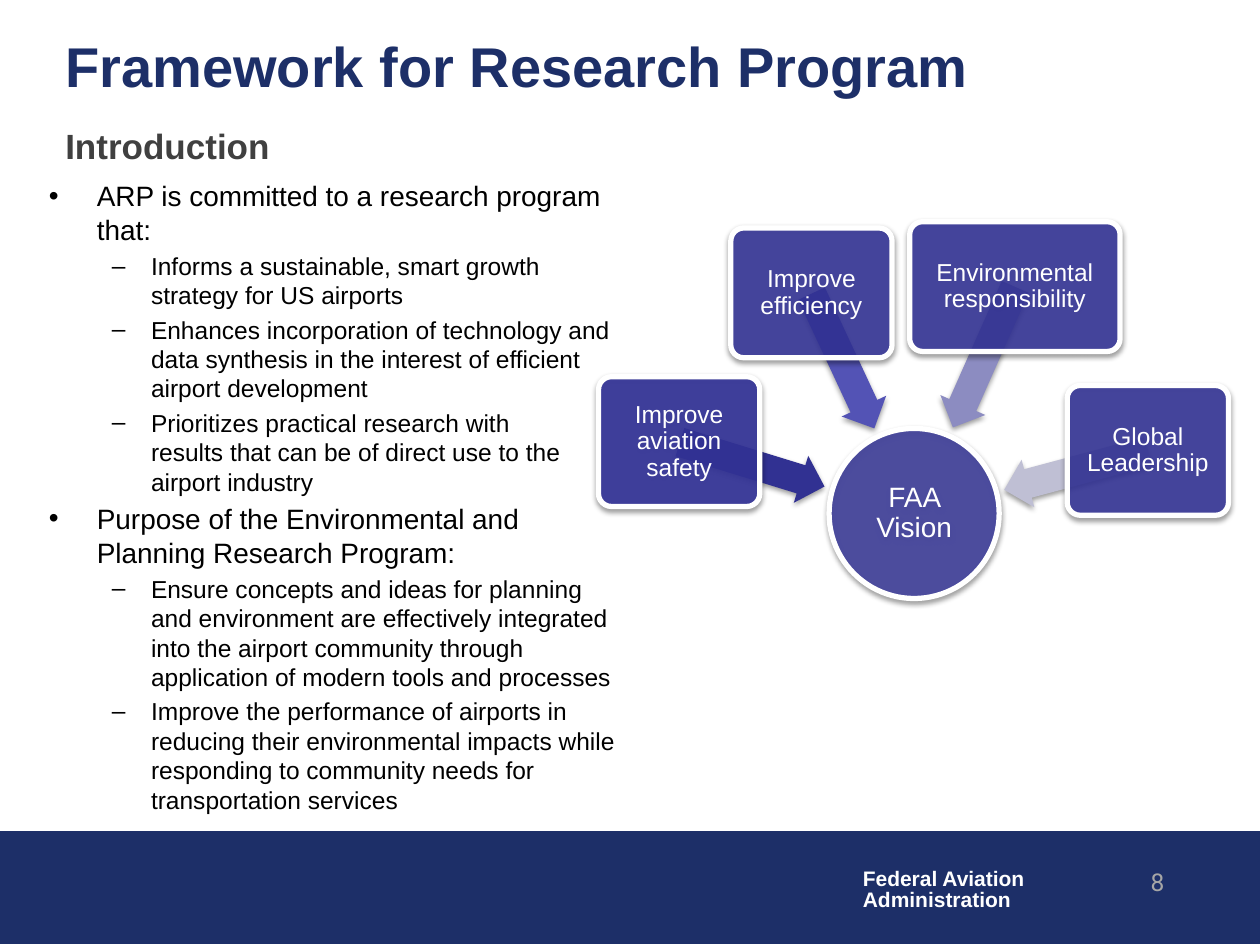
from lxml import etree
from pptx import Presentation
from pptx.dml.color import RGBColor
from pptx.enum import shapes, text
from pptx.oxml.ns import qn
from pptx.util import Inches, Pt

COLORS = {"navy": "1D2F68", "white": "FFFFFF", "black": "000000",
          "gray": "404040", "number": "A6A6A6", "indigo": "333399"}

TITLE = [("Framework for Research Program", 32, "navy", 0),
         ("Introduction", 20, "gray", 15)]

BODY = [
    ("ARP is committed to a research program that:", [
        "Informs a sustainable, smart growth strategy for US airports",
        "Enhances incorporation of technology and data synthesis in the "
        "interest of efficient airport development",
        "Prioritizes practical research with \v"
        "results that can be of direct use to the airport industry"]),
    ("Purpose of the Environmental and Planning Research Program:", [
        "Ensure concepts and ideas for planning and environment are effectively "
        "integrated into the airport community through application of modern "
        "tools and processes",
        "Improve the performance of airports in reducing their environmental "
        "impacts while responding to community needs for transportation services"]),
]
# bullet, left margin, hanging indent, size per level
LEVELS = [("•", 0.38, 0.38, 16), ("–", 0.81, 0.31, 14)]

# label, card box, opacity %, arrow box, arrow rotation, arrow color
GOALS = [
    ("Improve aviation safety", (4.75, 2.99, 1.28, 1.03), 90,
     (5.37, 3.49, 1.2, 0.39), 197.1, "313192"),
    ("Improve efficiency", (5.8, 1.81, 1.28, 1.03), 85,
     (6.1, 2.67, 1.18, 0.39), 245, "5353B5"),
    ("Environmental responsibility", (7.22, 1.76, 1.67, 1.03), 85,
     (7.2, 2.64, 1.22, 0.39), 293.9, "8C8CC1"),
    ("Global Leadership", (8.47, 3.06, 1.28, 1.03), 85,
     (7.95, 3.54, 1.18, 0.39), 345, "BFBFD4"),
]
VISION = ("FAA Vision", (6.58, 3.4, 1.35, 1.35), 80)

prs = Presentation()
prs.slide_width, prs.slide_height = Inches(10), Inches(7.5)
s = prs.slides.add_slide(prs.slide_layouts[6])


def rgb(color):
    return RGBColor.from_string(COLORS.get(color, color))


def write(p, words, size, color, font="Arial", bold=False, **layout):
    for name, value in layout.items():
        setattr(p, name, value)
    p.text = words
    for r in p.runs:
        for name, value in {"name": font, "size": Pt(size), "bold": bold}.items():
            setattr(r.font, name, value)
        r.font.color.rgb = rgb(color)


def add_text(box, anchor=text.MSO_ANCHOR.TOP, wrap=True):
    tf = s.shapes.add_textbox(*map(Inches, box)).text_frame
    tf.word_wrap, tf.vertical_anchor = wrap, anchor
    return tf


def next_paragraph(tf, i):
    return tf.add_paragraph() if i else tf.paragraphs[0]


def add_shape(kind, box, fill, line=None, width=0.75, opacity=100, shadow=True):
    sp = s.shapes.add_shape(kind, *map(Inches, box))
    sp.fill.solid()
    sp.fill.fore_color.rgb = rgb(fill)
    if line:
        sp.line.color.rgb = rgb(line)
        sp.line.width = Pt(width)
    else:
        sp.line.fill.background()
    props = sp._element.spPr
    if opacity < 100:
        color = props.find(qn("a:solidFill")).find(qn("a:srgbClr"))
        etree.SubElement(color, qn("a:alpha"), val=str(opacity * 1000))
    sp.shadow.inherit = False
    if shadow:
        outer = etree.SubElement(props.find(qn("a:effectLst")), qn("a:outerShdw"),
                                 blurRad=str(Pt(3.1)), dist=str(Pt(1.6)),
                                 dir="5400000", rotWithShape="0")
        color = etree.SubElement(outer, qn("a:srgbClr"), val=COLORS["black"])
        etree.SubElement(color, qn("a:alpha"), val="38000")
    return sp


def add_node(kind, label, box, opacity, size, inset):
    sp = add_shape(kind, box, "indigo", "white", 3, opacity)
    tf = sp.text_frame
    tf.word_wrap, tf.vertical_anchor = True, text.MSO_ANCHOR.MIDDLE
    for side in ("left", "right", "top", "bottom"):
        setattr(tf, f"margin_{side}", Inches(inset))
    write(tf.paragraphs[0], label, size, "white",
          alignment=text.PP_ALIGN.CENTER, line_spacing=0.9)
    return sp


# Footer band, agency name and page number
add_shape(shapes.MSO_SHAPE.RECTANGLE, (0, 6.6, 10, 0.89), "navy", "navy", shadow=False)
tf = add_text((6.75, 6.85, 1.5, 0.44), wrap=False)
for i, words in enumerate(["Federal Aviation", "Administration"]):
    write(next_paragraph(tf, i), words, 12, "white", bold=True, line_spacing=0.85)
tf = add_text((7.26, 6.83, 2.08, 0.5))
write(tf.paragraphs[0], "8", 14, "number", "Roboto", alignment=text.PP_ALIGN.RIGHT)

# Title and subtitle
tf = add_text((0.42, 0.45, 9.27, 0.67), text.MSO_ANCHOR.MIDDLE)
for i, (words, size, color, gap) in enumerate(TITLE):
    write(next_paragraph(tf, i), words, size, color, bold=True, space_before=Pt(gap))

# Bulleted body
tf = add_text((0.29, 1.37, 4.81, 4.64))
lines = [(level, words) for head, points in BODY
         for level, words in [(0, head)] + [(1, point) for point in points]]
for i, (level, words) in enumerate(lines):
    mark, margin, hang, size = LEVELS[level]
    p = next_paragraph(tf, i)
    pPr = p._p.get_or_add_pPr()
    pPr.set("marL", str(Inches(margin)))
    pPr.set("indent", str(-Inches(hang)))
    etree.SubElement(pPr, qn("a:buFont"), typeface="Arial")
    etree.SubElement(pPr, qn("a:buChar"), char=mark)
    write(p, words, size, "black", level=level,
          space_before=Pt(size * 0.2 if i else 0))

# Vision hub, then each goal card over its arrow
add_node(shapes.MSO_SHAPE.OVAL, *VISION, size=16, inset=0.01)
for label, box, opacity, arrow_box, angle, color in GOALS:
    arrow = add_shape(shapes.MSO_SHAPE.LEFT_ARROW, arrow_box, color)
    arrow.rotation = angle
    arrow.adjustments[0], arrow.adjustments[1] = 0.6, 0.5
    card = add_node(shapes.MSO_SHAPE.ROUNDED_RECTANGLE, label, box, opacity, 14, 0.03)
    card.adjustments[0] = 0.1

prs.save("out.pptx")
